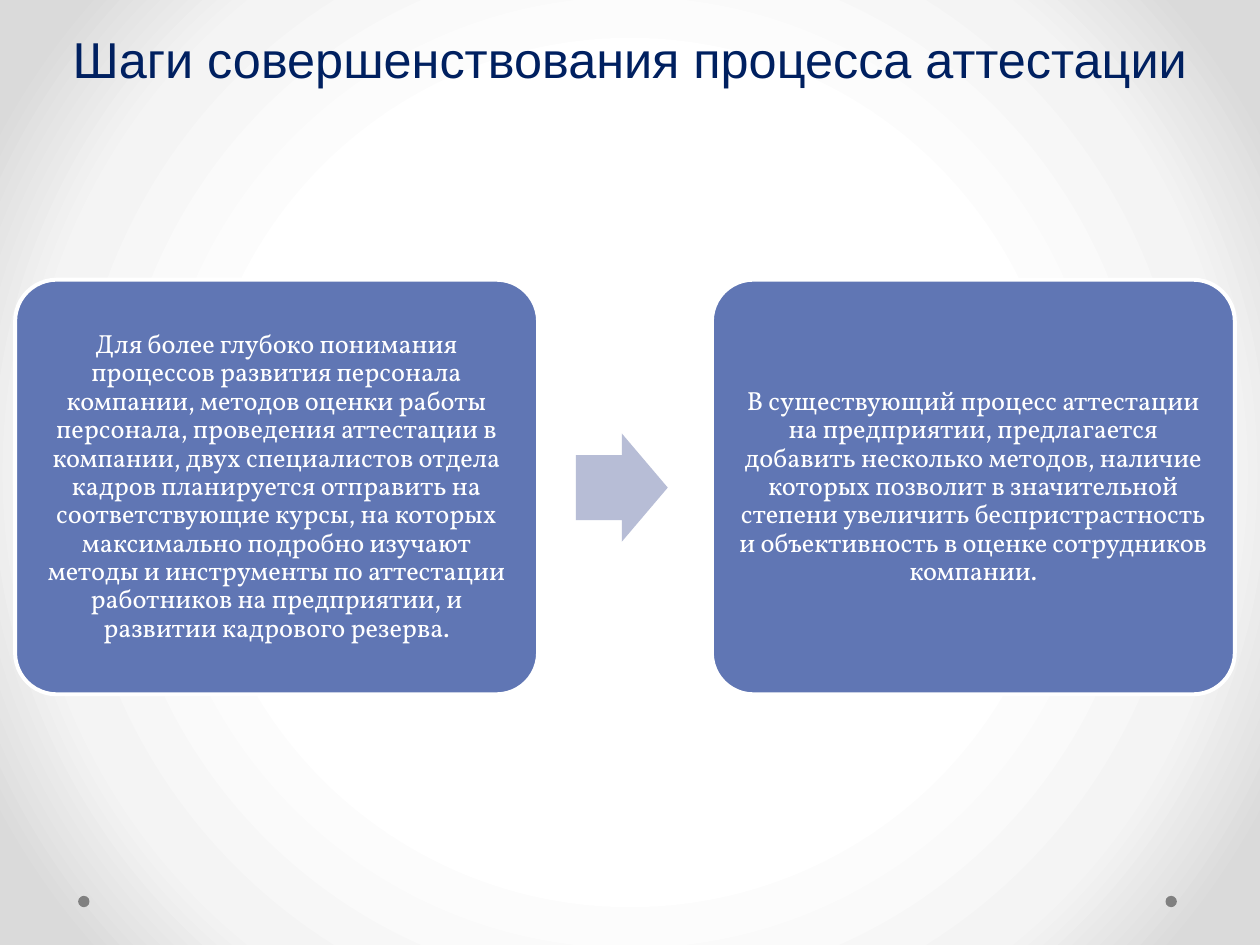
from lxml import etree
from pptx import Presentation
from pptx.dml.color import RGBColor
from pptx.enum.shapes import MSO_SHAPE
from pptx.enum.text import MSO_ANCHOR, MSO_AUTO_SIZE, PP_ALIGN
from pptx.oxml import parse_xml
from pptx.oxml.ns import nsdecls, qn
from pptx.util import Inches, Pt

WHITE = RGBColor(0xFF, 0xFF, 0xFF)
NAVY = RGBColor(0x00, 0x20, 0x60)
BLUE = RGBColor(0x60, 0x76, 0xB4)
PALE_BLUE = RGBColor(0xB7, 0xBD, 0xD6)
GRAY = RGBColor(0x80, 0x80, 0x80)

BACKGROUND_STOPS = [(50, "FFFFFF"), (76, "F4F4F4"), (92, "DADADA")]
STEPS = [
    (0.12, "Для более глубоко понимания процессов развития персонала компании, "
           "методов оценки работы персонала, проведения аттестации в компании, "
           "двух специалистов отдела кадров планируется отправить на "
           "соответствующие курсы, на которых максимально подробно изучают "
           "методы и инструменты по аттестации работников на предприятии, и "
           "развитии кадрового резерва."),
    (5.65, "В существующий процесс аттестации на предприятии, предлагается "
           "добавить несколько методов, наличие которых позволит в значительной "
           "степени увеличить беспристрастность и объективность в оценке "
           "сотрудников компании."),
]


def add_filled_shape(page, kind, left, top, width, height, color):
    shape = page.shapes.add_shape(
        kind, Inches(left), Inches(top), Inches(width), Inches(height))
    shape.shadow.inherit = False
    shape.fill.solid()
    shape.fill.fore_color.rgb = color
    shape.line.fill.background()
    return shape


deck = Presentation()
deck.slide_width = Inches(10)
deck.slide_height = Inches(7.5)
page = deck.slides.add_slide(deck.slide_layouts[5])

# Radial background, light in the centre
page.background.fill.gradient()
gradient = page.element.find(".//" + qn("a:gradFill"))
for child in list(gradient):
    gradient.remove(child)
stops = etree.SubElement(gradient, qn("a:gsLst"))
for position, color in BACKGROUND_STOPS:
    stop = etree.SubElement(stops, qn("a:gs"), pos=str(position * 1000))
    etree.SubElement(stop, qn("a:srgbClr"), val=color)
gradient.append(parse_xml(
    f'<a:path {nsdecls("a")} path="circle">'
    '<a:fillToRect l="50000" t="50000" r="50000" b="50000"/></a:path>'))

for left in (9.25, 0.62):
    add_filled_shape(page, MSO_SHAPE.OVAL, left, 7.11, 0.09, 0.09, GRAY)

title = page.shapes.title
title.left, title.top = Inches(0), Inches(-0.5)
title.width, title.height = Inches(10), Inches(1.25)
title.text_frame.text = "Шаги совершенствования процесса аттестации"
title.text_frame.auto_size = MSO_AUTO_SIZE.NONE
title.text_frame.vertical_anchor = MSO_ANCHOR.BOTTOM
para = title.text_frame.paragraphs[0]
para.alignment = PP_ALIGN.CENTER
para.line_spacing = Pt(58)
para.font.name = "Arial"
para.font.size = Pt(28.8)
para.font.color.rgb = NAVY

for left, text in STEPS:
    box = add_filled_shape(
        page, MSO_SHAPE.ROUNDED_RECTANGLE, left, 2.22, 4.15, 3.29, BLUE)
    box.adjustments[0] = 0.1
    box.line.color.rgb = WHITE
    box.line.width = Pt(2.25)
    frame = box.text_frame
    frame.word_wrap = True
    frame.vertical_anchor = MSO_ANCHOR.MIDDLE
    frame.margin_left = frame.margin_right = Inches(0.06)
    frame.margin_top = frame.margin_bottom = Inches(0.06)
    frame.text = text
    para = frame.paragraphs[0]
    para.alignment = PP_ALIGN.CENTER
    para.line_spacing = 0.9
    para.font.name = "Vollkorn"
    para.font.size = Pt(15)
    para.font.color.rgb = WHITE

arrow = add_filled_shape(
    page, MSO_SHAPE.RIGHT_ARROW, 4.57, 3.44, 0.73, 0.86, PALE_BLUE)
arrow.adjustments[0] = 0.6
arrow.adjustments[1] = 0.5

deck.save("out.pptx")
